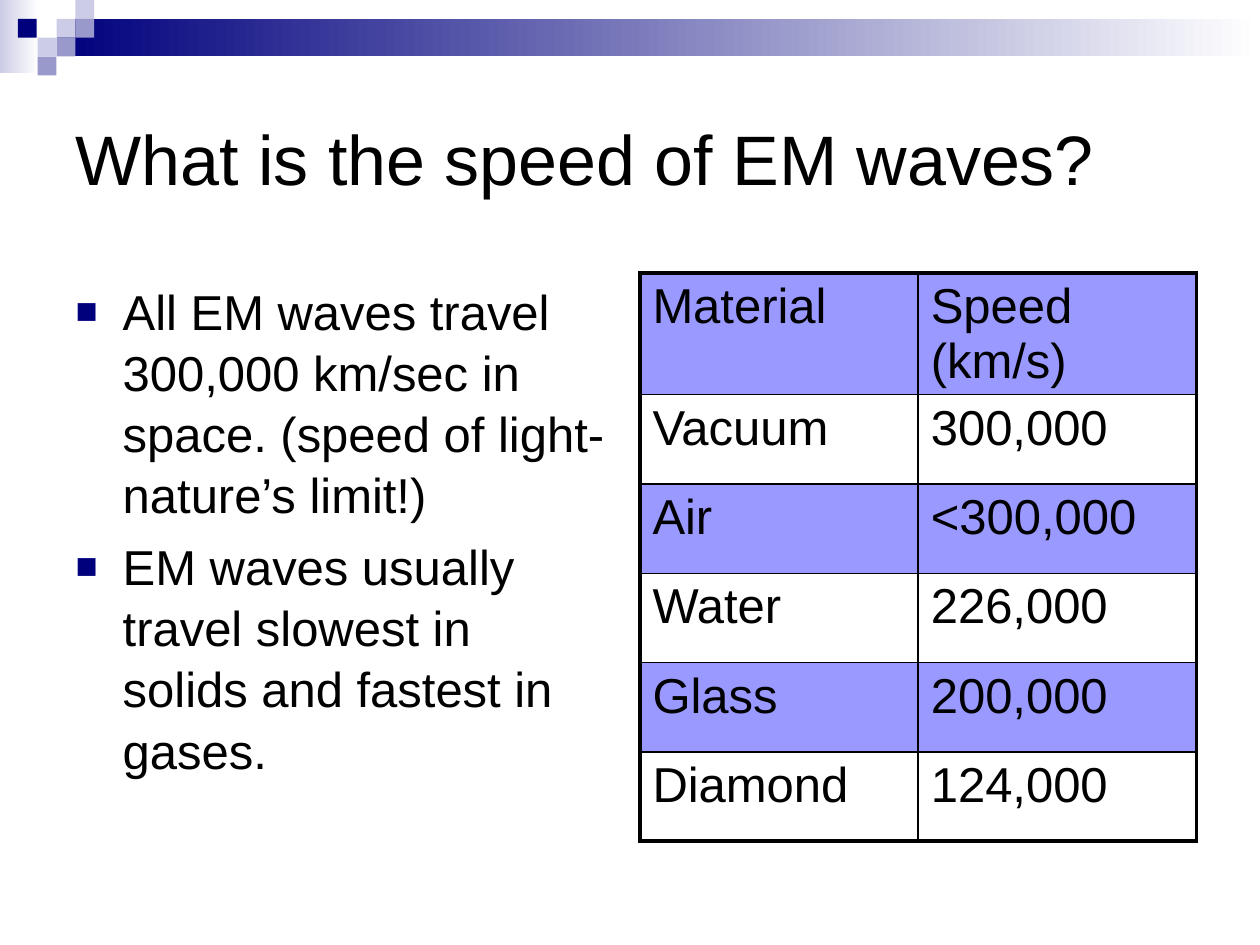
from lxml.etree import SubElement
from pptx import Presentation
from pptx.dml.color import RGBColor
from pptx.enum.shapes import MSO_SHAPE
from pptx.enum.text import MSO_ANCHOR, MSO_AUTO_SIZE, PP_ALIGN
from pptx.oxml.ns import qn
from pptx.util import Cm, Pt

NAVY, PALE, LILAC = "00007D", "CCCCE6", "9999CC"
BLACK, WHITE, BAND = "000000", "FFFFFF", "9999FF"
STEP = 0.38  # side of one decorative square, in cm

SQUARES = [  # column, row, colour
    (3, 1, PALE), (4, 0, PALE), (4, 1, LILAC), (2, 2, PALE),
    (0.95, 1, NAVY), (3, 2, LILAC), (2, 3, LILAC),
]
POINTS = [
    "All EM waves travel 300,000 km/sec in space. (speed of light-nature’s limit!)",
    "EM waves usually travel slowest in solids and fastest in gases.",
]
SPEEDS = [
    ("Material", "Speed (km/s)"),
    ("Vacuum", "300,000"),
    ("Air", "<300,000"),
    ("Water", "226,000"),
    ("Glass", "200,000"),
    ("Diamond", "124,000"),
]


def rgb(hex_colour):
    return RGBColor.from_string(hex_colour)


def place(shape, left, top, width, height):
    shape.left, shape.top = Cm(left), Cm(top)
    shape.width, shape.height = Cm(width), Cm(height)


def style(paragraph, size):
    paragraph.font.name = "Arial"
    paragraph.font.size = Pt(size)
    paragraph.font.color.rgb = rgb(BLACK)


def add_block(slide, left, top, width, height, *colours):
    """Add a borderless rectangle; two colours make a left-to-right gradient."""
    block = slide.shapes.add_shape(
        MSO_SHAPE.RECTANGLE, Cm(left), Cm(top), Cm(width), Cm(height))
    block.shadow.inherit = False
    block.line.fill.background()
    if len(colours) == 1:
        block.fill.solid()
        block.fill.fore_color.rgb = rgb(colours[0])
        return
    block.fill.gradient()
    block.fill.gradient_angle = 0
    for stop, position, colour in zip(block.fill.gradient_stops, (0, 1), colours):
        stop.position = position
        stop.color.rgb = rgb(colour)


def add_header_band(slide):
    add_block(slide, 0, 0, 0.79, 1.47, PALE, WHITE)
    add_block(slide, 1.14, STEP, 24.26, 2 * STEP, NAVY, WHITE)
    for column, row, colour in SQUARES:
        add_block(slide, column * STEP, row * STEP, STEP, STEP, colour)


def set_title(title, text):
    place(title, 1.27, 1.27, 22.86, 3.81)
    frame = title.text_frame
    frame.text = text
    frame.auto_size = MSO_AUTO_SIZE.NONE
    frame.vertical_anchor = MSO_ANCHOR.MIDDLE
    frame.paragraphs[0].alignment = PP_ALIGN.LEFT
    style(frame.paragraphs[0], 40)


def add_bullet(paragraph):
    properties = paragraph._p.get_or_add_pPr()
    properties.set("marL", str(Cm(0.95)))
    properties.set("indent", str(-Cm(0.95)))
    colour = SubElement(properties, qn("a:buClr"))
    SubElement(colour, qn("a:srgbClr"), val=NAVY)
    SubElement(properties, qn("a:buSzPct"), val="75000")
    SubElement(properties, qn("a:buFont"), typeface="Arial")
    SubElement(properties, qn("a:buChar"), char="■")


def set_points(body, points):
    place(body, 1.27, 5.5, 11.23, 10.8)
    frame = body.text_frame
    frame.text = "\n".join(points)
    frame.auto_size = MSO_AUTO_SIZE.NONE
    for number, paragraph in enumerate(frame.paragraphs):
        add_bullet(paragraph)
        paragraph.line_spacing = 1.04
        paragraph.space_before = Pt(6 if number else 0)
        style(paragraph, 28)


def set_borders(cell, outer_sides):
    """Draw all four borders, thick on the sides at the edge of the table."""
    properties = cell._tc.get_or_add_tcPr()
    for side in "LRTB":
        width = Pt(2.25 if side in outer_sides else 1)
        line = SubElement(properties, qn(f"a:ln{side}"), w=str(width))
        fill = SubElement(line, qn("a:solidFill"))
        SubElement(fill, qn("a:srgbClr"), val=BLACK)


def add_speed_table(slide, rows):
    table = slide.shapes.add_table(
        len(rows), 2, Cm(12.9), Cm(5.5), Cm(11.22), Cm(11.44)).table
    for r, texts in enumerate(rows):
        table.rows[r].height = Cm(1.8 if r else 2.44)
        for c, text in enumerate(texts):
            cell = table.cell(r, c)
            cell.text = text
            style(cell.text_frame.paragraphs[0], 28)
            outer_sides = "LR"[c]
            if r == 0:
                outer_sides += "T"
            if r == len(rows) - 1:
                outer_sides += "B"
            set_borders(cell, outer_sides)
            if r % 2:
                cell.fill.background()
            else:
                cell.fill.solid()
                cell.fill.fore_color.rgb = rgb(BAND)
    for paragraph in (table.cell(0, c).text_frame.paragraphs[0] for c in (0, 1)):
        paragraph.font.bold = False


def main():
    presentation = Presentation()
    presentation.slide_width, presentation.slide_height = Cm(25.4), Cm(19.05)
    slide = presentation.slides.add_slide(presentation.slide_layouts[1])
    add_header_band(slide)
    set_title(slide.shapes.title, "What is the speed of EM waves?")
    set_points(slide.placeholders[1], POINTS)
    add_speed_table(slide, SPEEDS)
    presentation.save("out.pptx")


if __name__ == "__main__":
    main()
